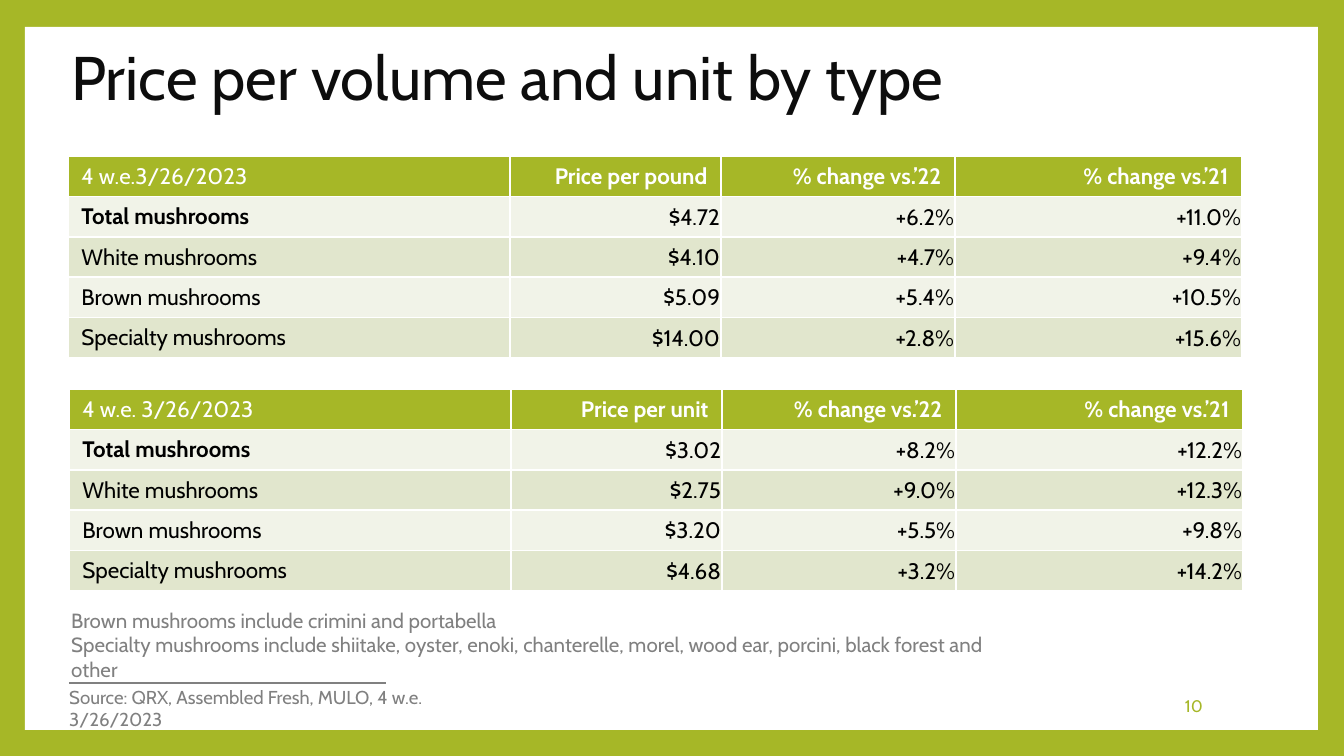
from lxml import etree
from pptx import Presentation
from pptx import util as u
from pptx.dml.color import RGBColor
from pptx.enum import shapes, text
from pptx.oxml import ns

GREEN = RGBColor(0xA6, 0xB7, 0x27)
PALE = RGBColor(0xF1, 0xF3, 0xE8)
SAGE = RGBColor(0xE1, 0xE6, 0xCD)
WHITE = RGBColor(0xFF, 0xFF, 0xFF)
BLACK = RGBColor(0x00, 0x00, 0x00)
INK = RGBColor(0x0D, 0x0D, 0x0D)
GRAY = RGBColor(0x80, 0x80, 0x80)

LEFT, RIGHT = text.PP_ALIGN.LEFT, text.PP_ALIGN.RIGHT
TOP, MIDDLE = text.MSO_ANCHOR.TOP, text.MSO_ANCHOR.MIDDLE

COLUMNS = (442, 211, 234, 287)
ROW_HEIGHT = 40
CHANGES = ("% change vs.’22", "% change vs.’21")
POUND_ROWS = (
    ("4 w.e.3/26/2023", "Price per pound", *CHANGES),
    ("Total mushrooms", "$4.72", "+6.2%", "+11.0%"),
    ("White mushrooms", "$4.10", "+4.7%", "+9.4%"),
    ("Brown mushrooms", "$5.09", "+5.4%", "+10.5%"),
    ("Specialty mushrooms", "$14.00", "+2.8%", "+15.6%"),
)
UNIT_ROWS = (
    ("4 w.e. 3/26/2023", "Price per unit", *CHANGES),
    ("Total mushrooms", "$3.02", "+8.2%", "+12.2%"),
    ("White mushrooms", "$2.75", "+9.0%", "+12.3%"),
    ("Brown mushrooms", "$3.20", "+5.5%", "+9.8%"),
    ("Specialty mushrooms", "$4.68", "+3.2%", "+14.2%"),
)
NOTES = (
    "Brown mushrooms include crimini and portabella\n"
    "Specialty mushrooms include shiitake, oyster, enoki, chanterelle, "
    "morel, wood ear, porcini, black forest and other"
)


def px(*lengths):
    return [u.Emu(round(length * 914400 / 134.4)) for length in lengths]


class SlideBuilder:
    """Holds the font and the current slide, and adds elements measured in px."""

    def __init__(self, slide, font="Cabin"):
        self.slide = slide
        self.font = font

    def background(self, color):
        fill = self.slide.background.fill
        fill.solid()
        fill.fore_color.rgb = color

    def panel(self, box, color):
        shape = self.slide.shapes.add_shape(shapes.MSO_SHAPE.RECTANGLE, *px(*box))
        shape.shadow.inherit = False
        shape.fill.solid()
        shape.fill.fore_color.rgb = color
        shape.line.fill.background()

    def set_text(self, frame, words, size, color, align=LEFT, bold=False, spacing=None):
        frame.text = words
        for paragraph in frame.paragraphs:
            paragraph.alignment = align
            paragraph.line_spacing = spacing
            for run in paragraph.runs:
                run.font.name = self.font
                run.font.size = u.Pt(size)
                run.font.bold = bold
                run.font.color.rgb = color

    def label(self, box, words, size, color, anchor=TOP, **style):
        frame = self.slide.shapes.add_textbox(*px(*box)).text_frame
        frame.word_wrap = True
        frame.vertical_anchor = anchor
        self.set_text(frame, words, size, color, **style)

    def rule(self, start, end, color, width):
        line = self.slide.shapes.add_connector(
            shapes.MSO_CONNECTOR.STRAIGHT, *px(*start, *end))
        line.line.color.rgb = color
        line.line.width = u.Pt(width)
        properties = line._element.find(ns.qn("p:spPr"))
        etree.SubElement(properties, ns.qn("a:effectLst"))

    def borders(self, cell, color, width):
        properties = cell._tc.get_or_add_tcPr()
        for side in ("lnL", "lnR", "lnT", "lnB"):
            line = etree.SubElement(properties, ns.qn(f"a:{side}"), w=str(u.Pt(width)))
            fill = etree.SubElement(line, ns.qn("a:solidFill"))
            etree.SubElement(fill, ns.qn("a:srgbClr"), val=str(color))

    def table(self, left, top, rows):
        box = px(left, top, sum(COLUMNS), ROW_HEIGHT * len(rows))
        table = self.slide.shapes.add_table(len(rows), len(COLUMNS), *box).table
        for column, width in zip(table.columns, px(*COLUMNS)):
            column.width = width
        for row_index, row in enumerate(rows):
            for column_index, words in enumerate(row):
                cell = table.cell(row_index, column_index)
                self.cell(cell, words, row_index, column_index)

    def cell(self, cell, words, row, column):
        header, number = row == 0, column > 0
        self.borders(cell, WHITE, 1)
        cell.fill.solid()
        cell.fill.fore_color.rgb = GREEN if header else PALE if row % 2 else SAGE
        cell.vertical_anchor = TOP if header else MIDDLE
        if number and not header:
            (cell.margin_left, cell.margin_top,
             cell.margin_right, cell.margin_bottom) = px(1, 1, 1, 0)
        self.set_text(cell.text_frame, words, 12, WHITE if header else BLACK,
                      align=RIGHT if number else LEFT,
                      bold=number if header else row == 1 and not number)


def main():
    presentation = Presentation()
    presentation.slide_width, presentation.slide_height = px(1344, 756)
    slide = presentation.slides.add_slide(presentation.slide_layouts[6])
    builder = SlideBuilder(slide)
    builder.background(GREEN)
    builder.panel((25, 27, 1293, 703), WHITE)
    builder.label((58, 28, 1146, 106), "Price per volume and unit by type",
                  33, INK, anchor=MIDDLE, spacing=0.9)
    builder.label((1028, 686, 188, 40), "10", 9, GREEN, anchor=MIDDLE, align=RIGHT)
    builder.rule((69, 683), (386, 683), GRAY, 0.79)
    builder.table(68, 156, POUND_ROWS)
    builder.label((56, 679, 444, 36),
                  "Source: QRX, Assembled Fresh, MULO, 4 w.e. 3/26/2023", 10, GRAY)
    builder.label((58, 601, 989, 63), NOTES, 11, GRAY)
    builder.table(69, 389, UNIT_ROWS)
    presentation.save("out.pptx")


if __name__ == "__main__":
    main()
